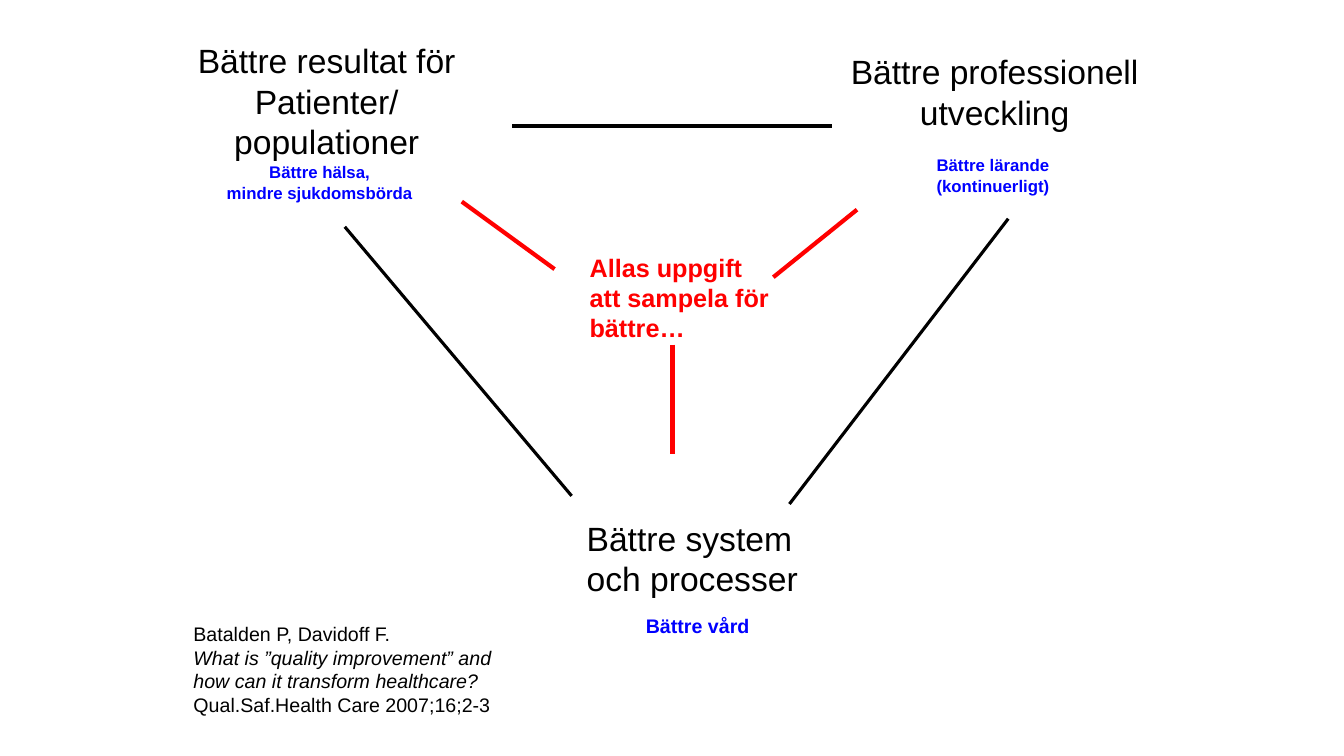
from dataclasses import dataclass

import pptx
import pptx.dml.color
import pptx.enum.shapes
import pptx.enum.text
import pptx.util
from lxml import etree
from pptx.oxml.ns import qn
from pptx.util import Inches

COLORS = {"ink": "000000", "task": "FF0000", "benefit": "0000FF"}
FONT = "Arial"
LEFT = pptx.enum.text.PP_ALIGN.LEFT
CENTER = pptx.enum.text.PP_ALIGN.CENTER


@dataclass
class Span:
    text: str  # a newline is a line break within the paragraph
    italic: bool = False


@dataclass
class Label:
    area: tuple[float, float, float, float]
    paragraphs: list[list[Span]]
    size: int
    color: str = "ink"
    bold: bool = False
    align: pptx.enum.text.PP_ALIGN = CENTER


@dataclass
class Line:
    start: tuple[float, float]
    end: tuple[float, float]
    color: str = "ink"
    width: float = 2.25


LABELS = [
    # Corners of the triangle
    Label((1.85, 0.35, 2.78, 1.31),
          [[Span("Bättre resultat för")], [Span("Patienter/")], [Span("populationer")]], 24),
    Label((8.32, 0.46, 3.09, 1.31), [[Span("Bättre professionell\nutveckling")]], 24),
    Label((5.72, 5.09, 2.32, 1.31),
          [[Span("Bättre system")], [Span("och processer")]], 24, align=LEFT),
    # What each corner brings
    Label((2.14, 1.56, 2.06, 0.5),
          [[Span("Bättre hälsa,")], [Span("mindre sjukdomsbörda")]], 12, "benefit", True),
    Label((9.19, 1.49, 1.38, 0.81),
          [[Span("Bättre lärande\n(kontinuerligt)")]], 12, "benefit", True, LEFT),
    Label((6.3, 6.04, 1.24, 0.34), [[Span("Bättre vård")]], 14, "benefit", True),
    # Shared task in the middle
    Label((5.75, 2.45, 2, 1.01),
          [[Span("Allas uppgift\natt sampela för")], [Span("bättre…")]],
          18, "task", True, LEFT),
    # Reference
    Label((1.82, 6.12, 3.23, 1.35),
          [[Span("Batalden P, Davidoff F.\n"),
            Span("What is ”quality improvement” and\nhow can it transform healthcare?", True)],
           [Span("Qual.Saf.Health Care 2007;16;2-3")]], 14, align=LEFT),
]

LINES = [
    # Sides of the triangle
    Line((5.08, 1.25), (8.25, 1.25)),
    Line((3.42, 2.25), (5.67, 4.92)),
    Line((7.83, 5), (10, 2.17)),
    # Spokes from the shared task
    Line((7.67, 2.75), (8.5, 2.08), "task", 3),
    Line((4.58, 2), (5.5, 2.67), "task", 3),
    Line((6.67, 3.42), (6.67, 4.5), "task", 3),
]


def rgb(name: str) -> pptx.dml.color.RGBColor:
    return pptx.dml.color.RGBColor.from_string(COLORS[name])


def draw_line(page: pptx.slide.Slide, line: Line) -> None:
    points = [Inches(value) for value in (*line.start, *line.end)]
    connector = page.shapes.add_connector(pptx.enum.shapes.MSO_CONNECTOR.STRAIGHT, *points)
    connector.line.color.rgb = rgb(line.color)
    connector.line.width = pptx.util.Pt(line.width)
    etree.SubElement(connector._element.spPr, qn("a:effectLst"))


def draw_label(page: pptx.slide.Slide, label: Label) -> None:
    box = page.shapes.add_textbox(*(Inches(value) for value in label.area))
    frame = box.text_frame
    frame.word_wrap = False
    for index, spans in enumerate(label.paragraphs):
        para = frame.add_paragraph() if index else frame.paragraphs[0]
        para.alignment = label.align
        for span in spans:
            look = {"name": FONT, "size": pptx.util.Pt(label.size),
                    "bold": label.bold, "italic": span.italic}
            for number, text in enumerate(span.text.split("\n")):
                if number:
                    para.add_line_break()
                if not text:
                    continue
                run = para.add_run()
                run.text = text
                for attribute, value in look.items():
                    setattr(run.font, attribute, value)
                run.font.color.rgb = rgb(label.color)


def main() -> None:
    deck = pptx.Presentation()
    deck.slide_width, deck.slide_height = Inches(13.33), Inches(7.5)
    page = deck.slides.add_slide(deck.slide_layouts[6])
    for line in LINES:
        draw_line(page, line)
    for label in LABELS:
        draw_label(page, label)
    deck.save("out.pptx")


if __name__ == "__main__":
    main()
